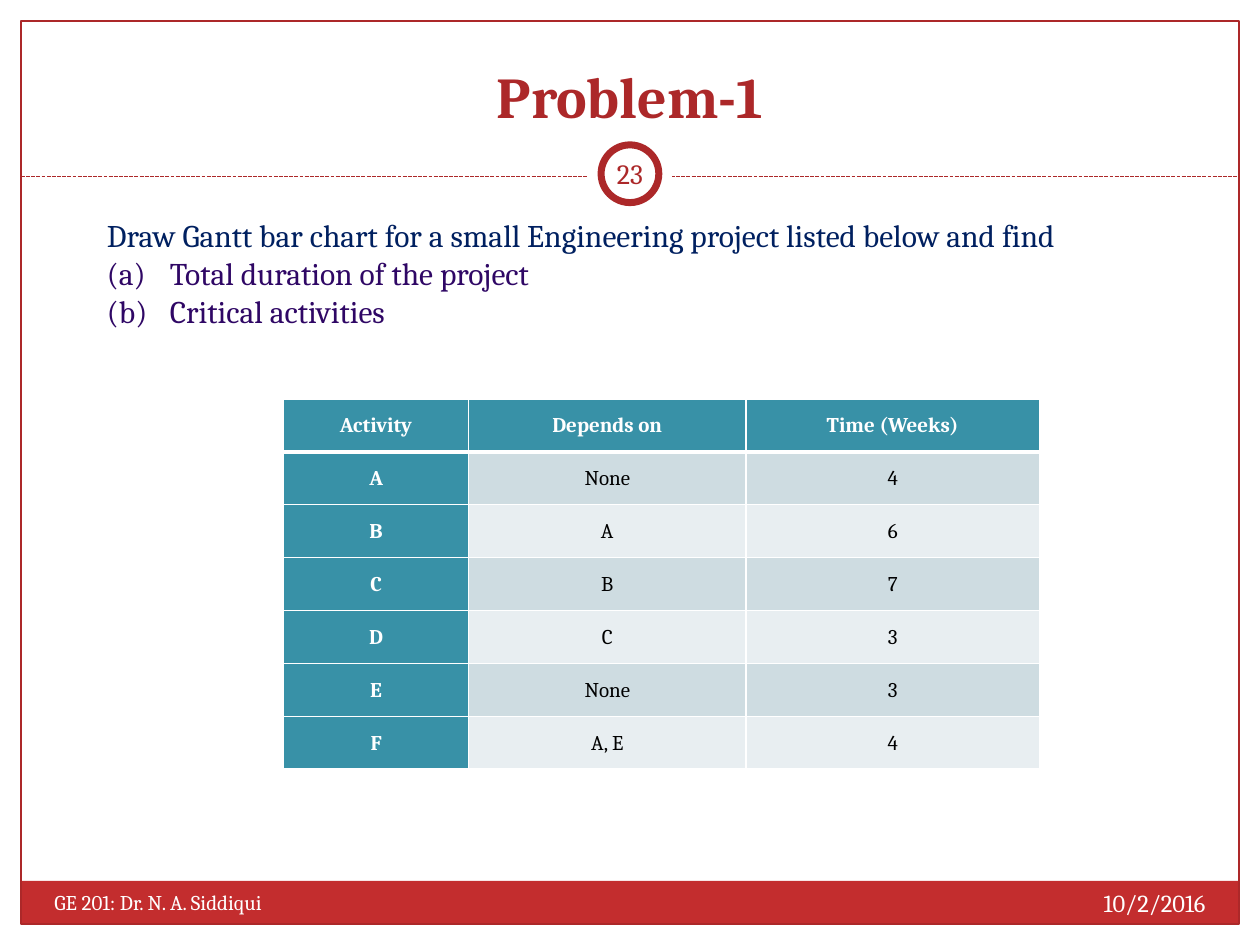
from dataclasses import dataclass
from typing import Any

from lxml import etree
from pptx import Presentation
from pptx import util as u
from pptx.dml import color
from pptx.enum import dml, shapes, text
from pptx.oxml import ns

WHITE, RED, DARK_RED, TEAL = "FFFFFF", "C32D2E", "AC2829", "3891A7"
NAVY, PURPLE, BLACK = "002060", "2F0765", "000000"
BANDS = ("CEDCE1", "E8EEF1")
LEFT, CENTER, RIGHT = text.PP_ALIGN.LEFT, text.PP_ALIGN.CENTER, text.PP_ALIGN.RIGHT
TOP, MIDDLE, BOTTOM = text.MSO_ANCHOR.TOP, text.MSO_ANCHOR.MIDDLE, text.MSO_ANCHOR.BOTTOM
ACTIVITIES = [
    ("Activity", "Depends on", "Time (Weeks)"),
    ("A", "None", "4"),
    ("B", "A", "6"),
    ("C", "B", "7"),
    ("D", "C", "3"),
    ("E", "None", "3"),
    ("F", "A, E", "4"),
]


def rgb(value):
    return color.RGBColor.from_string(value)


def grid(cells):
    return u.Inches(cells / 12)


def write(paragraph, words, size=12, ink=BLACK, bold=False, align=LEFT, font="Cambria"):
    paragraph.alignment = align
    run = paragraph.add_run()
    run.text = words
    run.font.name, run.font.size, run.font.bold = font, u.Pt(size), bold
    run.font.color.rgb = rgb(ink)


def border(cell, side, width):
    line = etree.SubElement(cell._tc.get_or_add_tcPr(), ns.qn(f"a:ln{side}"), w=str(u.Pt(width)))
    fill = etree.SubElement(line, ns.qn("a:solidFill"))
    etree.SubElement(fill, ns.qn("a:srgbClr"), val=WHITE)


@dataclass
class Page:
    """Draws styled elements on a slide, in a grid of 120 columns by 90 rows."""

    slide: Any
    accent: str = DARK_RED

    def shape(self, kind, col, row, cols, rows, fill=None, line=None):
        shape = self.slide.shapes.add_shape(kind, *map(grid, (col, row, cols, rows)))
        shape.shadow.inherit = False
        if fill:
            shape.fill.solid()
            shape.fill.fore_color.rgb = rgb(fill)
        else:
            shape.fill.background()
        if line:
            shape.line.color.rgb = rgb(self.accent)
            shape.line.width = u.Pt(line)
        else:
            shape.line.fill.background()

    def divider(self, start, end, row):
        divider = self.slide.shapes.add_connector(
            shapes.MSO_CONNECTOR.STRAIGHT, grid(start), grid(row), grid(end), grid(row))
        divider.line.color.rgb = rgb(self.accent)
        divider.line.width = u.Pt(0.75)
        divider.line.dash_style = dml.MSO_LINE.SQUARE_DOT
        etree.SubElement(divider._element.spPr, ns.qn("a:effectLst"))

    def words(self, col, row, cols, rows, *lines, anchor=TOP, inset=None, **style):
        frame = self.slide.shapes.add_textbox(*map(grid, (col, row, cols, rows))).text_frame
        frame.word_wrap, frame.vertical_anchor = True, anchor
        if inset is not None:
            frame.margin_left = frame.margin_right = u.Inches(inset)
            frame.margin_top = frame.margin_bottom = u.Inches(inset)
        for index, (line, ink) in enumerate(lines):
            paragraph = frame.add_paragraph() if index else frame.paragraphs[0]
            write(paragraph, line, ink=ink, **style)

    def table(self, col, row, widths, height, records):
        table = self.slide.shapes.add_table(
            len(records), len(widths), grid(col), grid(row),
            u.Inches(sum(widths)), u.Inches(height * len(records))).table
        for column, width in zip(table.columns, widths):
            column.width = u.Inches(width)
        for r, record in enumerate(records):
            table.rows[r].height = u.Inches(height)
            for c, value in enumerate(record):
                self.cell(table.cell(r, c), value, r, c)

    def cell(self, cell, value, r, c):
        heading = r == 0 or c == 0
        cell.vertical_anchor = MIDDLE
        cell.margin_left = cell.margin_right = u.Inches(0.04)
        cell.margin_top, cell.margin_bottom = u.Inches(0.01), 0
        for side in "LRTB":
            thick = (r, side) in ((0, "B"), (1, "T"))
            border(cell, side, 3 if thick else 1)
        cell.fill.solid()
        cell.fill.fore_color.rgb = rgb(TEAL if heading else BANDS[(r - 1) % 2])
        write(cell.text_frame.paragraphs[0], value, bold=heading,
              ink=WHITE if heading else BLACK, align=CENTER)


def main():
    deck = Presentation()
    deck.slide_width, deck.slide_height = grid(120), grid(90)
    page = Page(deck.slides.add_slide(deck.slide_layouts[6]))
    box, circle = shapes.MSO_SHAPE.RECTANGLE, shapes.MSO_SHAPE.OVAL

    page.shape(box, 2, 83.9, 116, 4.1, fill=RED)
    page.shape(box, 2, 2, 116, 86, line=0.75)
    page.divider(2, 118, 16.8)
    page.shape(circle, 56, 12.6, 8, 8, fill=WHITE)
    page.shape(circle, 57.25, 13.8, 5.5, 5.5, fill=WHITE, line=4)

    page.words(4, 3, 112, 10, ("Problem-1", DARK_RED),
               anchor=BOTTOM, size=33, bold=True, align=CENTER)
    page.words(76, 84, 40, 4.8, ("10/2/2016", WHITE), size=14, align=RIGHT)
    page.words(4, 84.1, 47, 4.8, ("GE 201: Dr. N. A. Siddiqui", WHITE))
    page.words(57, 13.6, 6, 5.8, ("23", DARK_RED),
               anchor=MIDDLE, inset=0.05, size=16, align=CENTER)
    page.words(9, 20, 106, 12.1,
               ("Draw Gantt bar chart for a small Engineering project listed below and find", NAVY),
               ("(a)\tTotal duration of the project", PURPLE),
               ("(b)\tCritical activities", PURPLE), size=18)
    page.table(27, 38, (1.47, 2.2, 2.33), 0.42, ACTIVITIES)
    deck.save("out.pptx")


if __name__ == "__main__":
    main()
